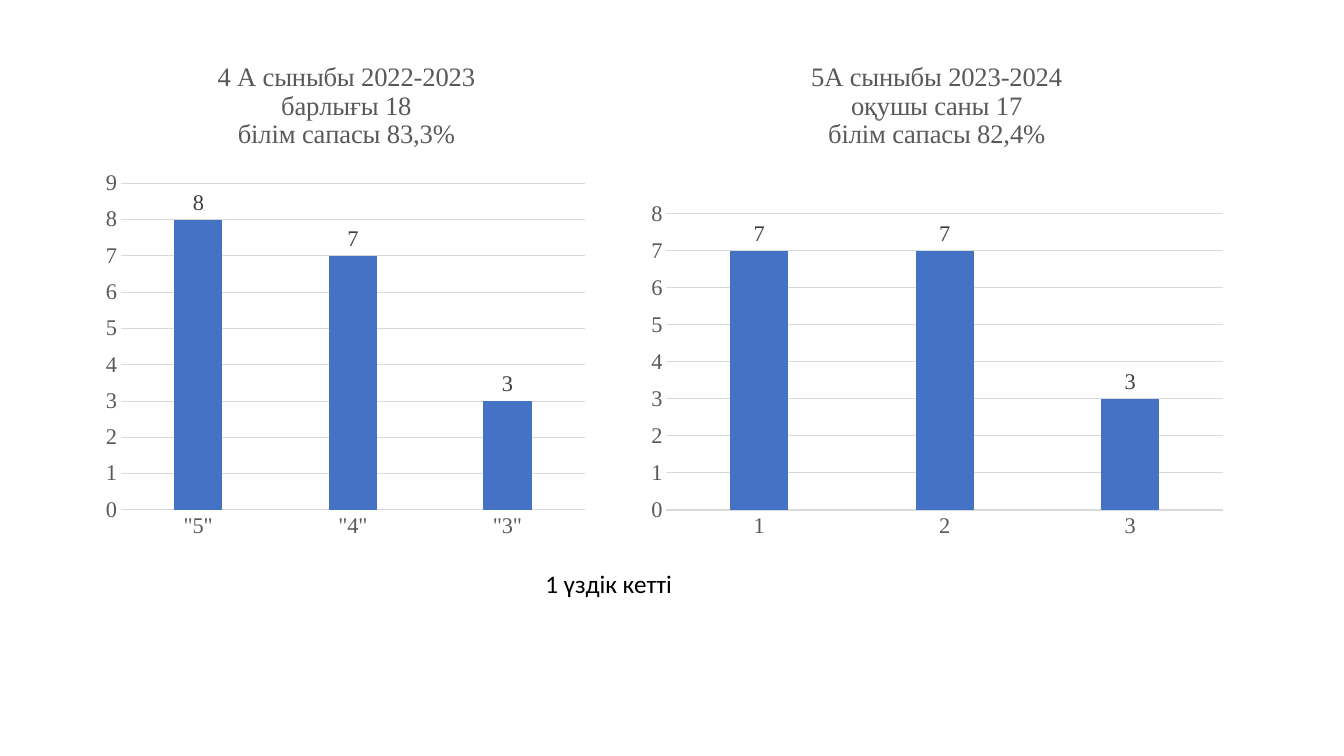
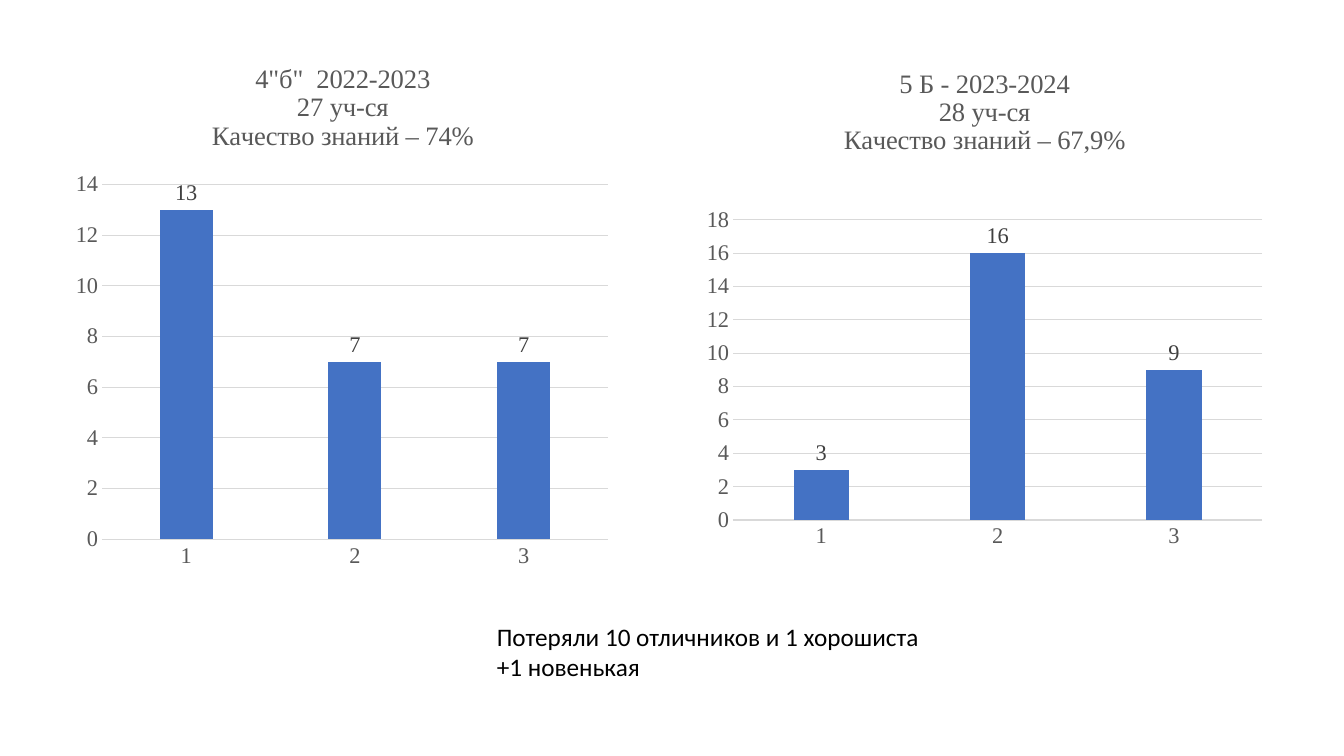
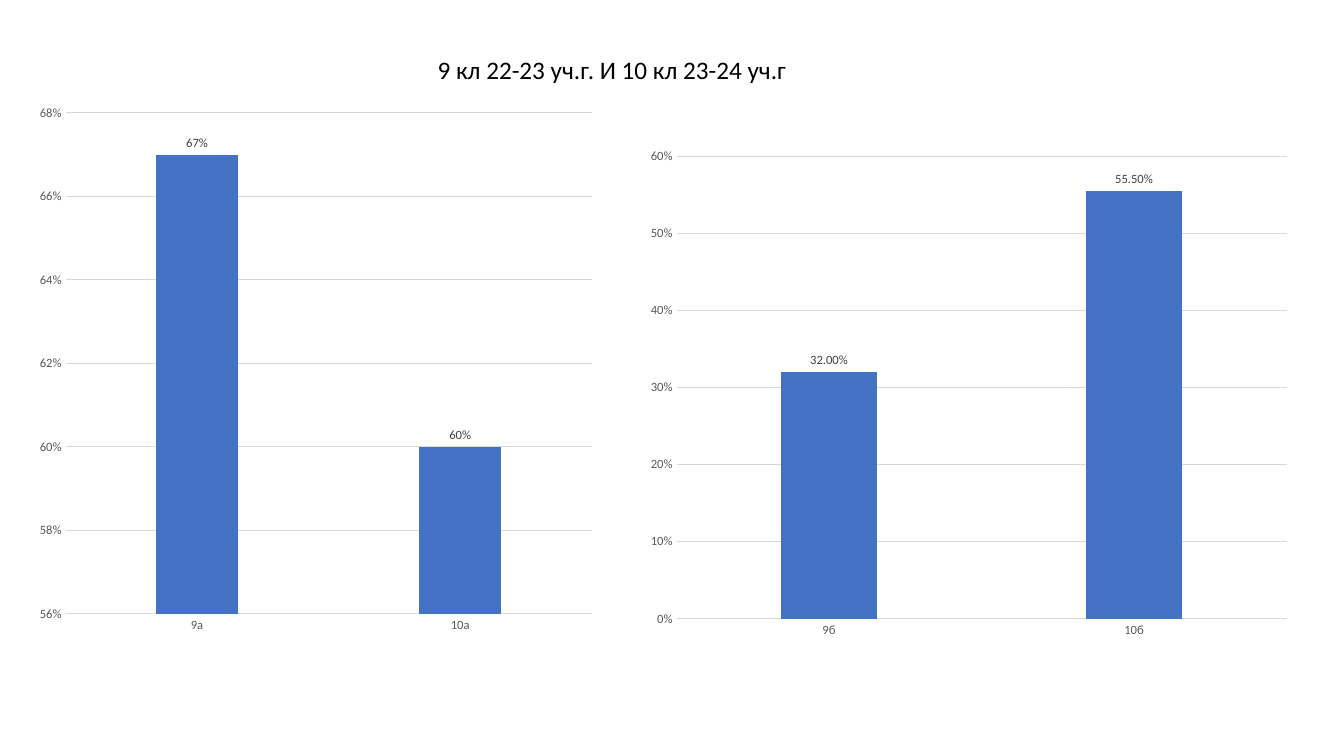
from pptx import Presentation
from pptx.chart.data import CategoryChartData
from pptx.dml.color import RGBColor
from pptx.enum.chart import (XL_CHART_TYPE as ChartType, XL_LABEL_POSITION as LabelPosition,
                             XL_TICK_MARK as TickMark)
from pptx.enum.text import (MSO_ANCHOR as Anchor, MSO_AUTO_SIZE as AutoSize,
                            PP_ALIGN as Align)
from pptx.oxml import parse_xml
from pptx.oxml.ns import nsdecls
from pptx.util import Inches, Pt

TITLE_ONLY, BLANK = 5, 6


def rgb(value):
    return RGBColor.from_string(value)


def set_font(font, size, face, color):
    values = {"size": Pt(size), "name": face, "bold": False}
    for attribute, value in values.items():
        setattr(font, attribute, value)
    font.color.rgb = rgb(color)


def set_line(line, color):
    line.color.rgb = rgb(color)
    line.width = Pt(0.75)


class Deck:
    BAR, GRID, AXIS_TEXT = "4472C4", "D9D9D9", "595959"
    LABEL_TEXT, INK = "404040", "000000"
    SERIF, SANS = "Times New Roman", "Calibri"

    def __init__(self):
        self.presentation = Presentation()
        self.presentation.slide_width = Inches(13.33)
        self.presentation.slide_height = Inches(7.5)
        self.slide = None

    def add_slide(self, layout=BLANK):
        layouts = self.presentation.slide_layouts
        self.slide = self.presentation.slides.add_slide(layouts[layout])

    def fill_text(self, box, lines, wrap=False):
        frame = box.text_frame
        frame.text = "\n".join(lines)
        values = {"word_wrap": wrap, "auto_size": AutoSize.SHAPE_TO_FIT_TEXT,
                  "vertical_anchor": Anchor.TOP}
        for attribute, value in values.items():
            setattr(frame, attribute, value)
        for paragraph in frame.paragraphs:
            paragraph.alignment = Align.LEFT
            set_font(paragraph.font, 18, self.SANS, self.INK)

    def title(self, text, position):
        heading = self.slide.shapes.title
        for side, length in zip(("left", "top", "width", "height"), position):
            setattr(heading, side, Inches(length))
        self.fill_text(heading, [text], wrap=True)

    def note(self, lines, position):
        self.fill_text(self.slide.shapes.add_textbox(*map(Inches, position)), lines)

    def column_chart(self, position, plot_area, grades, scale, heading=(),
                     face=SERIF, size=16, axis_format="General", label_format="General"):
        """Draw labelled columns; plot_area is in slide inches, scale is (min, max, step)."""
        data = CategoryChartData()
        data.categories = list(grades)
        data.add_series("Series 1", list(grades.values()))
        chart = self.slide.shapes.add_chart(
            ChartType.COLUMN_CLUSTERED, *map(Inches, position), data).chart
        chart.has_legend = False
        set_font(chart.font, size, face, self.INK)
        self.chart_heading(chart, heading, face)
        self.place_plot(chart, position, plot_area)
        self.format_axes(chart, scale, face, size, axis_format)
        self.format_columns(chart.plots[0], face, size, label_format)

    def chart_heading(self, chart, lines, face):
        chart.has_title = bool(lines)
        if lines:
            frame = chart.chart_title.text_frame
            frame.text = "\n".join(lines)
            for paragraph in frame.paragraphs:
                paragraph.alignment = Align.CENTER
                set_font(paragraph.font, 19, face, self.AXIS_TEXT)
            chart.chart_title.include_in_layout = False

    def place_plot(self, chart, position, plot_area):
        """Fix the inner plot rectangle as fractions of the chart frame."""
        left, top, width, height = position
        x, y, w, h = plot_area
        fractions = {"x": (x - left) / width, "y": (y - top) / height,
                     "w": w / width, "h": h / height}
        modes = "".join(f'<c:{axis}Mode val="edge"/>' for axis in "xy")
        sizes = "".join(f'<c:{key} val="{value:.4f}"/>' for key, value in fractions.items())
        plot = chart.element.xpath("c:chart/c:plotArea")[0]
        for layout in plot.xpath("c:layout"):
            plot.remove(layout)
        plot.insert(0, parse_xml(
            f'<c:layout {nsdecls("c")}><c:manualLayout><c:layoutTarget val="inner"/>'
            f'{modes}{sizes}</c:manualLayout></c:layout>'))

    def format_axes(self, chart, scale, face, size, number_format):
        categories, values = chart.category_axis, chart.value_axis
        for axis in (categories, values):
            axis.major_tick_mark = axis.minor_tick_mark = TickMark.NONE
            set_font(axis.tick_labels.font, size, face, self.AXIS_TEXT)
        set_line(categories.format.line, self.GRID)
        values.format.line.fill.background()
        values.has_major_gridlines = True
        set_line(values.major_gridlines.format.line, self.GRID)
        for attribute, value in zip(("minimum_scale", "maximum_scale", "major_unit"), scale):
            setattr(values, attribute, value)
        values.tick_labels.number_format = number_format
        values.tick_labels.number_format_is_linked = False

    def format_columns(self, plot, face, size, number_format):
        values = {"gap_width": 219, "overlap": -27, "vary_by_categories": False,
                  "has_data_labels": True}
        for attribute, value in values.items():
            setattr(plot, attribute, value)
        fill = plot.series[0].format.fill
        fill.solid()
        fill.fore_color.rgb = rgb(self.BAR)
        labels = plot.data_labels
        values = {"show_value": True, "position": LabelPosition.OUTSIDE_END,
                  "number_format": number_format, "number_format_is_linked": False}
        for attribute, value in values.items():
            setattr(labels, attribute, value)
        set_font(labels.font, size, face, self.LABEL_TEXT)


def main():
    deck = Deck()

    deck.add_slide()
    deck.column_chart((0.96, 0.43, 4.95, 5.02), (1.2, 1.82, 4.6, 3.24),
                      {'"5"': 8, '"4"': 7, '"3"': 3}, (0, 9, 1),
                      ("4 А сыныбы 2022-2023", "барлығы 18", "білім сапасы 83,3%"))
    deck.column_chart((6.34, 0.43, 5.9, 5.02), (6.61, 2.12, 5.52, 2.94),
                      {"1": 7, "2": 7, "3": 3}, (0, 8, 1),
                      ("5А сыныбы 2023-2024", "оқушы саны 17", "білім сапасы 82,4%"))
    deck.note(["1 үздік кетті"], (5.31, 5.59, 1.53, 0.4))

    deck.add_slide()
    deck.column_chart((0.65, 0.44, 5.5, 5.31), (1.01, 1.83, 5.02, 3.52),
                      {"1": 13, "2": 7, "3": 7}, (0, 14, 2),
                      ('4"б"  2022-2023', "27 уч-ся", "Качество знаний – 74%"))
    deck.column_chart((6.9, 0.49, 5.73, 5.06), (7.27, 2.18, 5.25, 2.98),
                      {"1": 3, "2": 16, "3": 9}, (0, 18, 2),
                      ("5 Б - 2023-2024", "28 уч-ся", "Качество знаний – 67,9%"))
    deck.note(["Потеряли 10 отличников и 1 хорошиста", "+1 новенькая"],
              (4.83, 6.11, 4.44, 0.71))

    deck.add_slide(TITLE_ONLY)
    percent = {"face": deck.SANS, "size": 9, "axis_format": "0%"}
    deck.column_chart((0.28, 0.94, 5.71, 5.44), (0.65, 1.12, 5.22, 4.97),
                      {"9а": 0.67, "10а": 0.6}, (0.56, 0.68, 0.02),
                      label_format="0%", **percent)
    deck.column_chart((6.32, 1.38, 6.57, 5.06), (6.71, 1.55, 6.05, 4.59),
                      {"9б": 0.32, "10б": 0.555}, (0, 0.6, 0.1),
                      label_format="0.00%", **percent)
    deck.title("9 кл 22-23 уч.г. И 10 кл 23-24 уч.г", (4.24, 0.49, 3.7, 0.4))

    deck.presentation.save("out.pptx")


if __name__ == "__main__":
    main()
